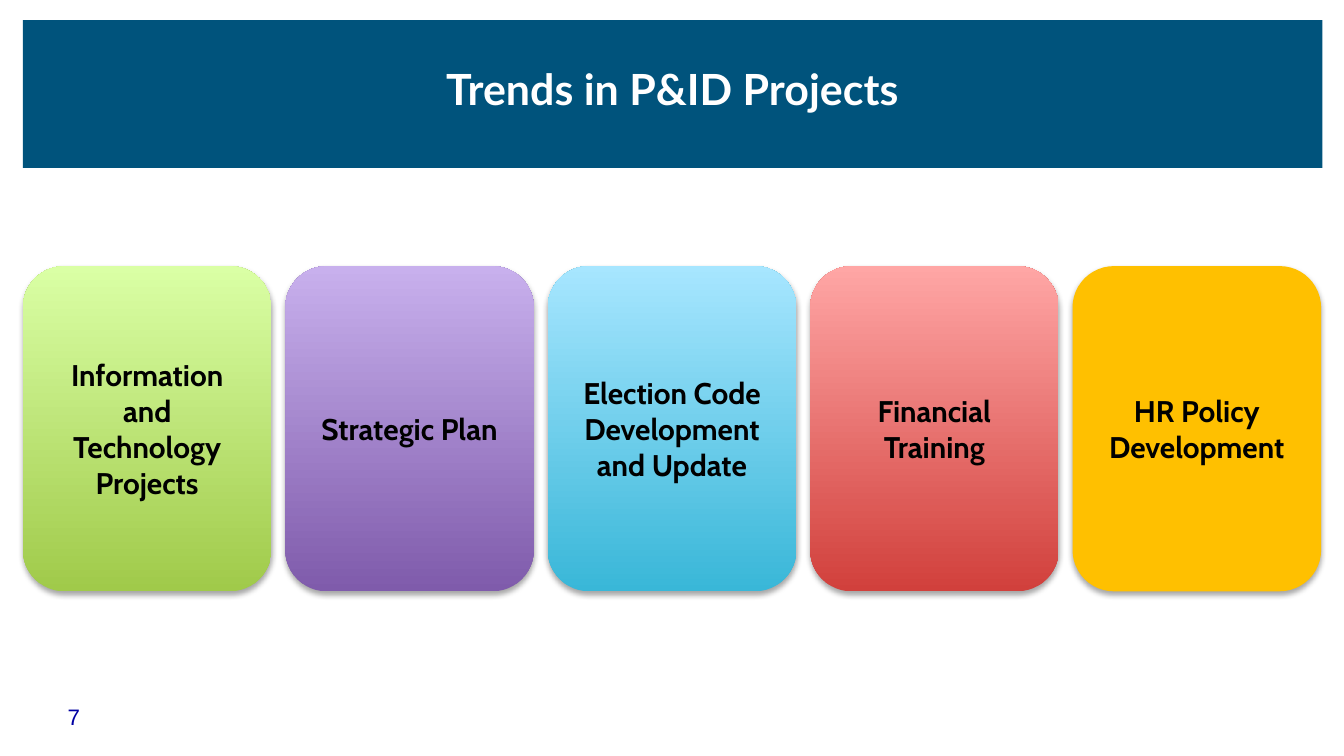
from lxml import etree
from pptx import Presentation
from pptx.dml.color import RGBColor
from pptx.enum.shapes import MSO_SHAPE
from pptx.enum.text import MSO_ANCHOR, PP_ALIGN
from pptx.oxml.ns import qn
from pptx.util import Inches, Pt

RECTANGLE = MSO_SHAPE.RECTANGLE
ROUNDED = MSO_SHAPE.ROUNDED_RECTANGLE
MIDDLE = MSO_ANCHOR.MIDDLE
CENTER = PP_ALIGN.CENTER

WHITE = RGBColor(0xFF, 0xFF, 0xFF)
BLACK = RGBColor(0x00, 0x00, 0x00)
NAVY = RGBColor(0x00, 0x53, 0x7C)
NUMBER_BLUE = RGBColor(0x00, 0x00, 0xA3)
GREEN, LIGHT_GREEN = RGBColor(0xA0, 0xCA, 0x4A), RGBColor(0xDA, 0xFF, 0xA5)
PURPLE, LIGHT_PURPLE = RGBColor(0x7F, 0x5B, 0xAB), RGBColor(0xC8, 0xB0, 0xED)
CYAN, LIGHT_CYAN = RGBColor(0x39, 0xB7, 0xD8), RGBColor(0xA7, 0xE6, 0xFF)
RED, LIGHT_RED = RGBColor(0xD1, 0x40, 0x3C), RGBColor(0xFF, 0xA6, 0xA5)
AMBER = RGBColor(0xFF, 0xC0, 0x00)

# Label, then fill colours from bottom to top
PROJECTS = [
    ("Information and Technology Projects", (GREEN, LIGHT_GREEN)),
    ("Strategic Plan", (PURPLE, LIGHT_PURPLE)),
    ("Election Code Development and Update", (CYAN, LIGHT_CYAN)),
    ("Financial Training", (RED, LIGHT_RED)),
    ("HR Policy Development", (AMBER,)),
]


def write_text(shape, text, font, size, color, bold=True):
    frame = shape.text_frame
    frame.word_wrap = True
    frame.vertical_anchor = MIDDLE
    para = frame.paragraphs[0]
    para.alignment = CENTER
    span = para.add_run()
    span.text = text
    span.font.name = font
    span.font.size = Pt(size)
    span.font.bold = bold
    span.font.color.rgb = color


def add_block(page, kind, left, top, width, height):
    block = page.shapes.add_shape(
        kind, Inches(left), Inches(top), Inches(width), Inches(height))
    block.line.fill.background()
    block.shadow.inherit = False
    return block


def paint(shape, colors):
    if len(colors) == 1:
        shape.fill.solid()
        shape.fill.fore_color.rgb = colors[0]
        return
    shape.fill.gradient()
    shape.fill.gradient_angle = 90
    for stop, color in zip(shape.fill.gradient_stops, colors):
        stop.color.rgb = color


def add_soft_shadow(shape):
    effects = shape._element.spPr.find(qn("a:effectLst"))
    shadow = etree.SubElement(
        effects, qn("a:outerShdw"), blurRad=str(Pt(3.1)), dist=str(Pt(1.8)),
        dir="5400000", rotWithShape="0")
    tint = etree.SubElement(shadow, qn("a:srgbClr"), val=str(BLACK))
    etree.SubElement(tint, qn("a:alpha"), val="35000")


def add_title_band(page, left, top, width, height):
    band = add_block(page, RECTANGLE, left, top, width, height)
    paint(band, (NAVY,))
    write_text(band, "Trends in P&ID Projects", "Lato", 23, WHITE)
    band.text_frame.margin_bottom = Inches(0.14)


def add_project_cards(page, left, top, width, height):
    card_width = 1.85
    step = (width - card_width) / (len(PROJECTS) - 1)
    for index, (label, colors) in enumerate(PROJECTS):
        card = add_block(
            page, ROUNDED, left + index * step, top, card_width, height)
        paint(card, colors)
        add_soft_shadow(card)
        write_text(card, label, "Cabin", 16, BLACK)


def add_page_number(page, left, top, width, height):
    box = page.shapes.add_textbox(
        Inches(left), Inches(top), Inches(width), Inches(height))
    write_text(box, "7", "Arial", 12, NUMBER_BLUE, bold=False)
    box.text_frame.margin_bottom = Inches(0.07)


def main():
    deck = Presentation()
    deck.slide_width = Inches(10)
    deck.slide_height = deck.slide_width * 9 // 16
    page = deck.slides.add_slide(deck.slide_layouts[6])
    add_page_number(page, 0.08, 5.19, 0.94, 0.3)
    add_title_band(page, 0.17, 0.15, 9.67, 1.1)
    add_project_cards(page, 0.17, 1.98, 9.66, 2.42)
    deck.save("out.pptx")


if __name__ == "__main__":
    main()
